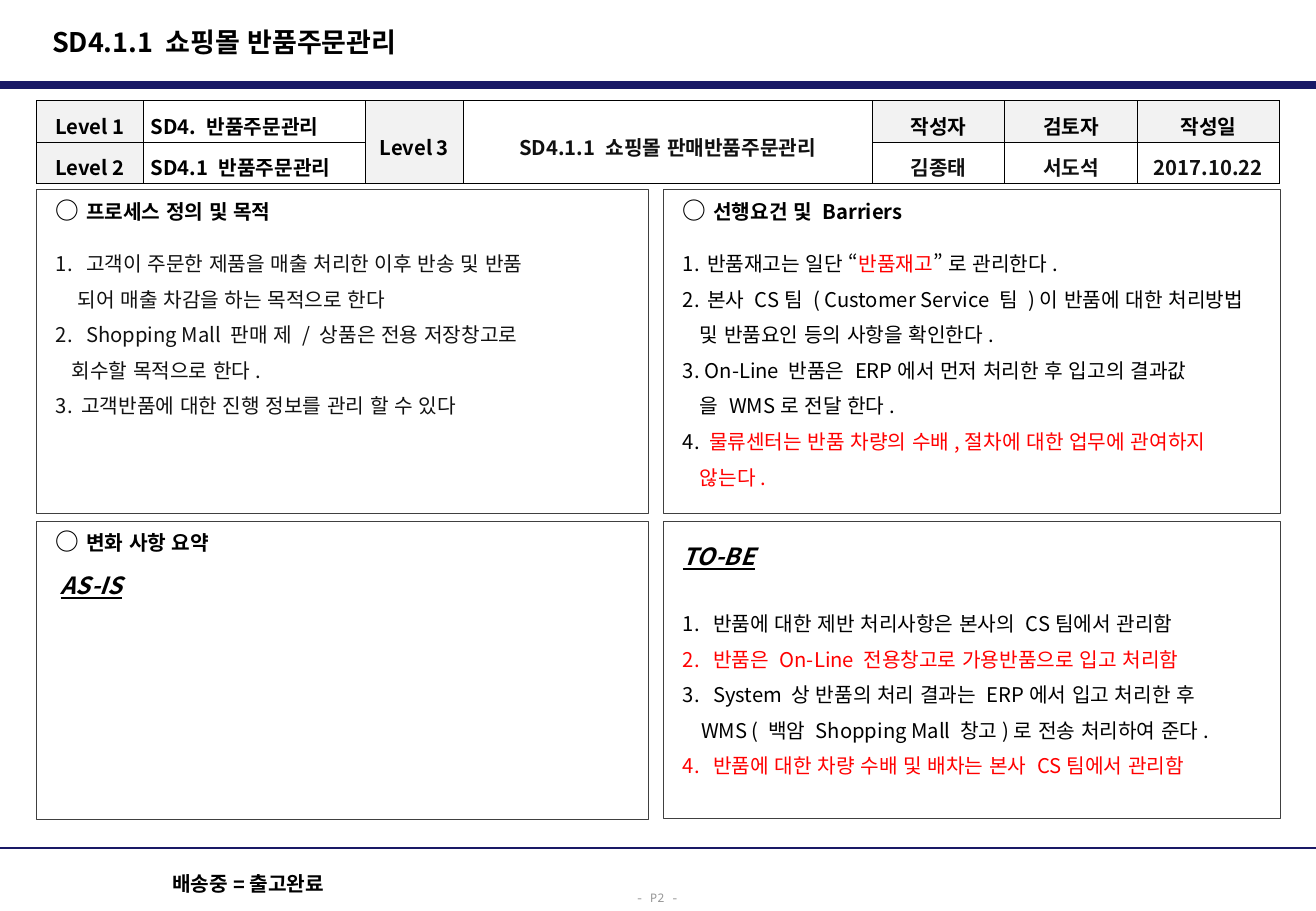
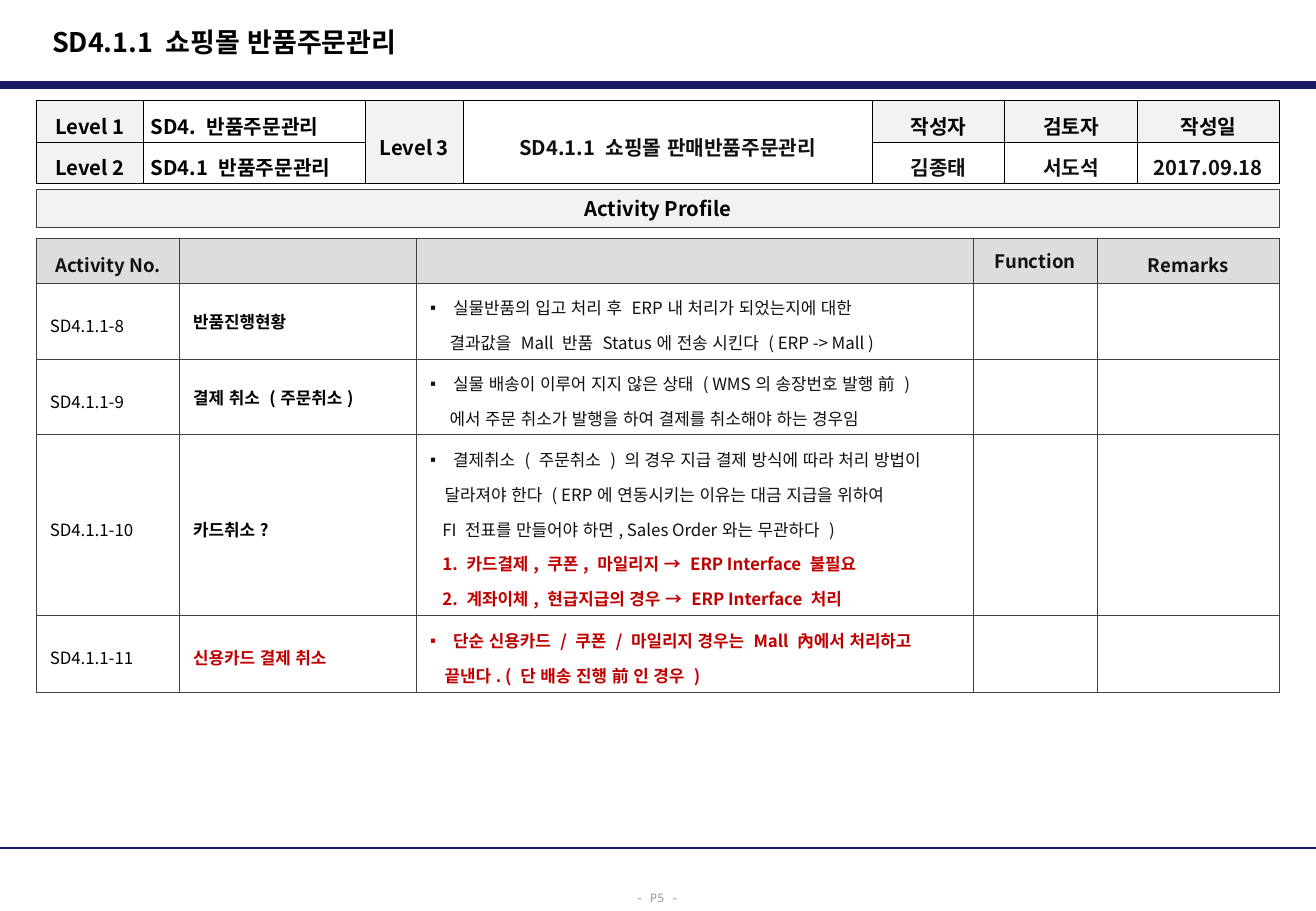
from lxml import etree
from pptx import Presentation
from pptx.dml.color import RGBColor
from pptx.enum.lang import MSO_LANGUAGE_ID
from pptx.enum.shapes import MSO_CONNECTOR, MSO_SHAPE
from pptx.enum.text import MSO_ANCHOR, PP_ALIGN
from pptx.oxml.ns import qn
from pptx.util import Emu, Pt

RECT, STRAIGHT = MSO_SHAPE.RECTANGLE, MSO_CONNECTOR.STRAIGHT
TOP, MIDDLE = MSO_ANCHOR.TOP, MSO_ANCHOR.MIDDLE
LEFT, CENTER = PP_ALIGN.LEFT, PP_ALIGN.CENTER
KOREAN = MSO_LANGUAGE_ID.KOREAN

SCALE = 9144
WIDTH, HEIGHT = 1083, 750
MARGIN, CONTENT_W = 30, 1023
SANS, MONO, ARIAL = "Noto Sans CJK KR", "Noto Sans Mono", "Arial"
NAVY, BLACK, INK, GRAY = "191966", "000000", "111111", "969696"
BORDER, PALE, SILVER = "404040", "F2F2F2", "DDDDDD"
RED, DARK_RED = "FF0000", "C00000"


def px(n):
    """Turn px into EMU."""
    return Emu(round(n * SCALE))


def rgb(value):
    """Turn a hex string into a colour."""
    return RGBColor.from_string(value)


def para(*runs, left=0, hang=0, mark=None, before=0.0, spacing=1.0, align=LEFT, **style):
    """Describe a paragraph; a run is text or (text, style), a mark is a number or a bullet."""
    pairs = [(run, {}) if isinstance(run, str) else run for run in runs]
    return dict(runs=[(text, {**style, **own}) for text, own in pairs], left=left,
                hang=hang, mark=mark, before=before, spacing=spacing, align=align)


def add_run(p, text, size=12, color=BLACK, bold=False, italic=False, underline=False, font=SANS):
    """Append one styled run."""
    r = p.add_run()
    r.text = text
    f = r.font
    f.size, f.bold, f.italic, f.underline, f.name = Pt(size), bold, italic, underline, font
    f.language_id = KOREAN
    f.color.rgb = rgb(color)
    ea = etree.Element(qn("a:ea"), typeface=SANS)
    r._r.get_or_add_rPr().find(qn("a:latin")).addnext(ea)


def write(tf, paras):
    """Fill a text frame with paragraphs."""
    for i, item in enumerate(paras):
        p = tf.add_paragraph() if i else tf.paragraphs[0]
        p.alignment, p.line_spacing = item["align"], item["spacing"]
        p.space_before = Pt(item["before"] if i else 0)
        pPr = p._p.get_or_add_pPr()
        pPr.set("marL", str(px(item["left"])))
        pPr.set("indent", str(px(-item["hang"])))
        mark = item["mark"]
        if isinstance(mark, int):
            etree.SubElement(pPr, qn("a:buAutoNum"), type="arabicPeriod", startAt=str(mark))
        elif mark:
            etree.SubElement(pPr, qn("a:buFont"), typeface=ARIAL)
            etree.SubElement(pPr, qn("a:buChar"), char=mark)
        for text, style in item["runs"]:
            add_run(p, text, **style)


def set_frame(tf, insets=(10, 5, 10, 5), anchor=TOP, wrap=True):
    """Set insets, anchor and wrapping of a text frame."""
    tf.margin_left, tf.margin_top, tf.margin_right, tf.margin_bottom = map(px, insets)
    tf.vertical_anchor, tf.word_wrap = anchor, wrap


def add_text(s, box, paras, **frame):
    """Add a text box."""
    tf = s.shapes.add_textbox(*map(px, box)).text_frame
    set_frame(tf, **frame)
    write(tf, paras)


def add_panel(s, box, paras, fill=None, **frame):
    """Add an outlined rectangle holding text."""
    sp = s.shapes.add_shape(RECT, *map(px, box))
    sp.shadow.inherit = False
    if fill:
        sp.fill.solid()
        sp.fill.fore_color.rgb = rgb(fill)
    else:
        sp.fill.background()
    sp.line.color.rgb, sp.line.width = rgb(BORDER), Pt(0.5)
    set_frame(sp.text_frame, **frame)
    write(sp.text_frame, paras)


def add_rule(s, y, weight):
    """Add a navy line across the slide."""
    line = s.shapes.add_connector(STRAIGHT, 0, px(y), px(WIDTH), px(y))
    line.line.color.rgb, line.line.width = rgb(NAVY), Pt(weight)
    etree.SubElement(line._element.spPr, qn("a:effectLst"))


def style_cell(cell, paras, fill, border, insets):
    """Set borders, fill, insets and text of a table cell."""
    tcPr = cell._tc.get_or_add_tcPr()
    for side in ("lnL", "lnR", "lnT", "lnB"):
        ln = etree.SubElement(tcPr, qn(f"a:{side}"), w=str(Pt(0.5)))
        solid = etree.SubElement(ln, qn("a:solidFill"))
        etree.SubElement(solid, qn("a:srgbClr"), val=border)
    if fill:
        cell.fill.solid()
        cell.fill.fore_color.rgb = rgb(fill)
    else:
        cell.fill.background()
    cell.margin_left = cell.margin_right = px(insets[0])
    cell.margin_top = cell.margin_bottom = px(insets[1])
    cell.vertical_anchor = MIDDLE
    if paras:
        write(cell.text_frame, paras)
    else:
        etree.SubElement(cell.text_frame.paragraphs[0]._p, qn("a:endParaRPr"), sz="1000")


def add_grid(s, left, top, cols, rows, cells, border, insets):
    """Add a table whose cells are (paragraphs, fill) pairs."""
    box = map(px, (left, top, sum(cols), sum(rows)))
    table = s.shapes.add_table(len(rows), len(cols), *box).table
    table.first_row = table.horz_banding = False
    for col, width in zip(table.columns, cols):
        col.width = px(width)
    for row, height, values in zip(table.rows, rows, cells):
        row.height = px(height)
        for cell, (paras, fill) in zip(row.cells, values):
            style_cell(cell, paras, fill, border, insets)
    return table


def add_frame(s, page):
    """Add the title, rules and page number shared by all slides."""
    add_rule(s, 70, 4.5)
    add_rule(s, 698, 1.5)
    add_text(s, (33, 15, 711, 38), [para("SD4.1.1 쇼핑몰 반품주문관리", size=16, bold=True)],
             anchor=MIDDLE)
    add_text(s, (513, 725, 56, 25), [para(f"- P{page} -", size=7, color=GRAY, font=MONO,
                                          spacing=1.3, align=CENTER)], wrap=False)


def add_level_table(s, top, date):
    """Add the process level table."""
    def cell(text, fill=None, align=CENTER, color=BLACK):
        return [para(text, bold=True, color=color, spacing=1.3, align=align)], fill

    cells = [
        [cell("Level 1", PALE), cell("SD4. 반품주문관리", align=LEFT), cell("Level 3", PALE),
         cell("SD4.1.1 쇼핑몰 판매반품주문관리", color=INK)]
        + [cell(text, PALE) for text in ("작성자", "검토자", "작성일")],
        [cell("Level 2", PALE), cell("SD4.1 반품주문관리", align=LEFT), ([], PALE), ([], None)]
        + [cell(text, color=INK) for text in ("김종태", "서도석", date)],
    ]
    table = add_grid(s, MARGIN, top, [88, 183, 80, 337, 109, 109, 117], [34, 34],
                     cells, BLACK, (6, 1))
    for col in (2, 3):
        table.cell(0, col).merge(table.cell(1, col))


def heading(text):
    """Describe the heading of a panel."""
    return para(("○ ", {"size": 14}), text, bold=True)


def state(text, **layout):
    """Describe an AS-IS or TO-BE label."""
    return para(text, size=14, bold=True, italic=True, underline=True, **layout)


def item(*runs, number=None, left=25, before=2.4, color=BLACK):
    """Describe a numbered line, or a continuation line without a number."""
    return para(*runs, mark=number, left=left, hang=left if number else 0,
                before=before, spacing=1.3, color=color)


def add_panels(s, left, top):
    """Add the four definition panels in two columns."""
    left_w, right_w, gap = 504, 508, 12
    right, low = left + left_w + gap, top + 273
    insets = (16, 5, 10, 5)
    add_panel(s, (left, top, left_w, 267), [
        heading("프로세스 정의 및 목적"),
        item("고객이 주문한 제품을 매출 처리한 이후 반송 및 반품", number=1, before=12, color=INK),
        item("되어 매출 차감을 하는 목적으로 한다", left=18, color=INK),
        item("Shopping Mall 판매 제 / 상품은 전용 저장창고로", number=2, color=INK),
        item("회수할 목적으로 한다.", left=13, color=INK),
        item("고객반품에 대한 진행 정보를 관리 할 수 있다", number=3, left=21, color=INK),
    ], insets=insets)
    add_panel(s, (right, top, right_w, 267), [
        heading("선행요건 및 Barriers"),
        item("반품재고는 일단 “", ("반품재고", {"color": RED}), "” 로 관리한다.",
             number=1, left=20, before=12),
        item("본사 CS팀 ( Customer Service 팀 )이 반품에 대한 처리방법", number=2, left=20),
        item("및 반품요인 등의 사항을 확인한다.", left=14),
        item("On-Line 반품은 ERP에서 먼저 처리한 후 입고의 결과값", number=3, left=18),
        item("을 WMS로 전달 한다.", left=14),
        para("4. ", ("물류센터는 반품 차량의 수배,절차에 대한 업무에 관여하지", {"color": RED}),
             before=2.4, spacing=1.3),
        item("않는다.", left=14, color=RED),
    ], insets=insets)
    add_panel(s, (left, low, left_w, 246),
              [heading("변화 사항 요약"), state("AS-IS", left=4, before=9)], insets=insets)
    add_panel(s, (right, low, right_w, 245), [
        state("TO-BE"),
        item("반품에 대한 제반 처리사항은 본사의 CS팀에서 관리함", number=1, before=20),
        item("반품은 On-Line 전용창고로 가용반품으로 입고 처리함", number=2, color=RED),
        item("System 상 반품의 처리 결과는 ERP에서 입고 처리한 후", number=3),
        item("WMS ( 백암 Shopping Mall 창고)로 전송 처리하여 준다.", left=15),
        item("반품에 대한 차량 수배 및 배차는 본사 CS팀에서 관리함", number=4, color=RED),
    ], insets=(16, 17, 10, 5))


def detail(text, left=19, mark=None, hang=0, color=INK):
    """Describe a line of an activity description."""
    return para(text, left=left, hang=hang, mark=mark, before=1.8, spacing=1.3,
                size=10, color=color, bold=color == DARK_RED)


def bullet(text, color=INK):
    """Describe the bulleted first line of an activity description."""
    return detail(text, mark="▪", hang=19, color=color)


def add_activity_table(s, left, top):
    """Add the activity table."""
    def head(text, spacing=1.3):
        return [para(text, size=11, color=INK, bold=True, spacing=spacing, align=CENTER)], SILVER

    activities = [
        ("SD4.1.1-8", "반품진행현황", 1.0, BLACK, [
            bullet("실물반품의 입고 처리 후 ERP내 처리가 되었는지에 대한"),
            detail("결과값을 Mall 반품 Status에 전송 시킨다 ( ERP -> Mall )", 16)]),
        ("SD4.1.1-9", "결제 취소 (주문취소)", 1.0, BLACK, [
            bullet("실물 배송이 이루어 지지 않은 상태 ( WMS의 송장번호 발행 前 )"),
            detail("에서 주문 취소가 발행을 하여 결제를 취소해야 하는 경우임", 16)]),
        ("SD4.1.1-10", "카드취소?", 1.3, BLACK, [
            bullet("결제취소 ( 주문취소 ) 의 경우 지급 결제 방식에 따라 처리 방법이"),
            detail("달라져야 한다 ( ERP에 연동시키는 이유는 대금 지급을 위하여", 12),
            detail("FI 전표를 만들어야 하면, Sales Order와는 무관하다 )", 10),
            detail("카드결제, 쿠폰, 마일리지 → ERP Interface 불필요", 30, 1, 20, DARK_RED),
            detail("계좌이체, 현급지급의 경우 → ERP Interface 처리", 30, 2, 20, DARK_RED)]),
        ("SD4.1.1-11", "신용카드 결제 취소", 1.3, DARK_RED, [
            bullet("단순 신용카드 / 쿠폰 / 마일리지 경우는 Mall 內에서 처리하고", DARK_RED),
            detail("끝낸다. ( 단 배송 진행 前 인 경우 )", 12, color=DARK_RED)]),
    ]
    empty = ([], None)
    cells = [[head("Activity No."), ([], SILVER), ([], SILVER), head("Function", 1.0),
              head("Remarks")]]
    for number, name, spacing, color, lines in activities:
        cells.append([([para(number, size=10, spacing=1.3)], None),
                      ([para(name, size=10, bold=True, color=color, spacing=spacing)], None),
                      (lines, None), empty, empty])
    add_grid(s, left, top, [118, 195, 458, 102, 150], [37, 63, 62, 149, 63],
             cells, BORDER, (11, 4))


def definition_slide(prs):
    """Build the process definition slide."""
    s = prs.slides.add_slide(prs.slide_layouts[6])
    add_frame(s, 2)
    add_level_table(s, 83, "2017.10.22")
    add_panels(s, MARGIN, 156)
    add_text(s, (132, 712, 157, 30), [para("배송중=출고완료", bold=True, font=ARIAL)])


def activity_slide(prs):
    """Build the activity profile slide."""
    s = prs.slides.add_slide(prs.slide_layouts[6])
    add_frame(s, 5)
    add_level_table(s, 83, "2017.09.18")
    add_panel(s, (MARGIN, 156, CONTENT_W, 31),
              [para("Activity Profile", bold=True, align=CENTER)],
              fill=PALE, anchor=MIDDLE, wrap=False)
    add_activity_table(s, MARGIN, 196)


def main():
    """Build and save the presentation."""
    prs = Presentation()
    prs.slide_width, prs.slide_height = px(WIDTH), px(HEIGHT)
    definition_slide(prs)
    activity_slide(prs)
    prs.save("out.pptx")


if __name__ == "__main__":
    main()
